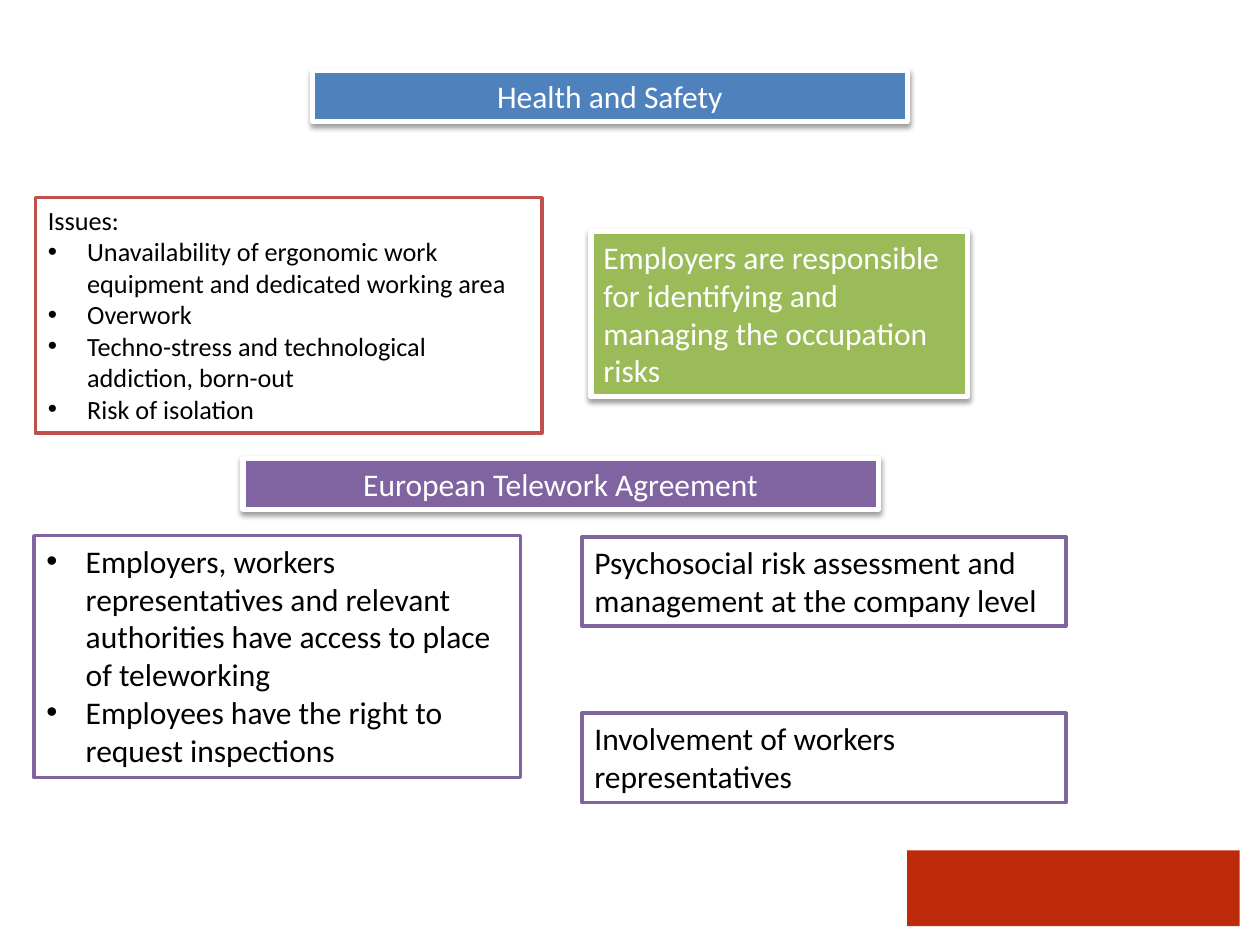
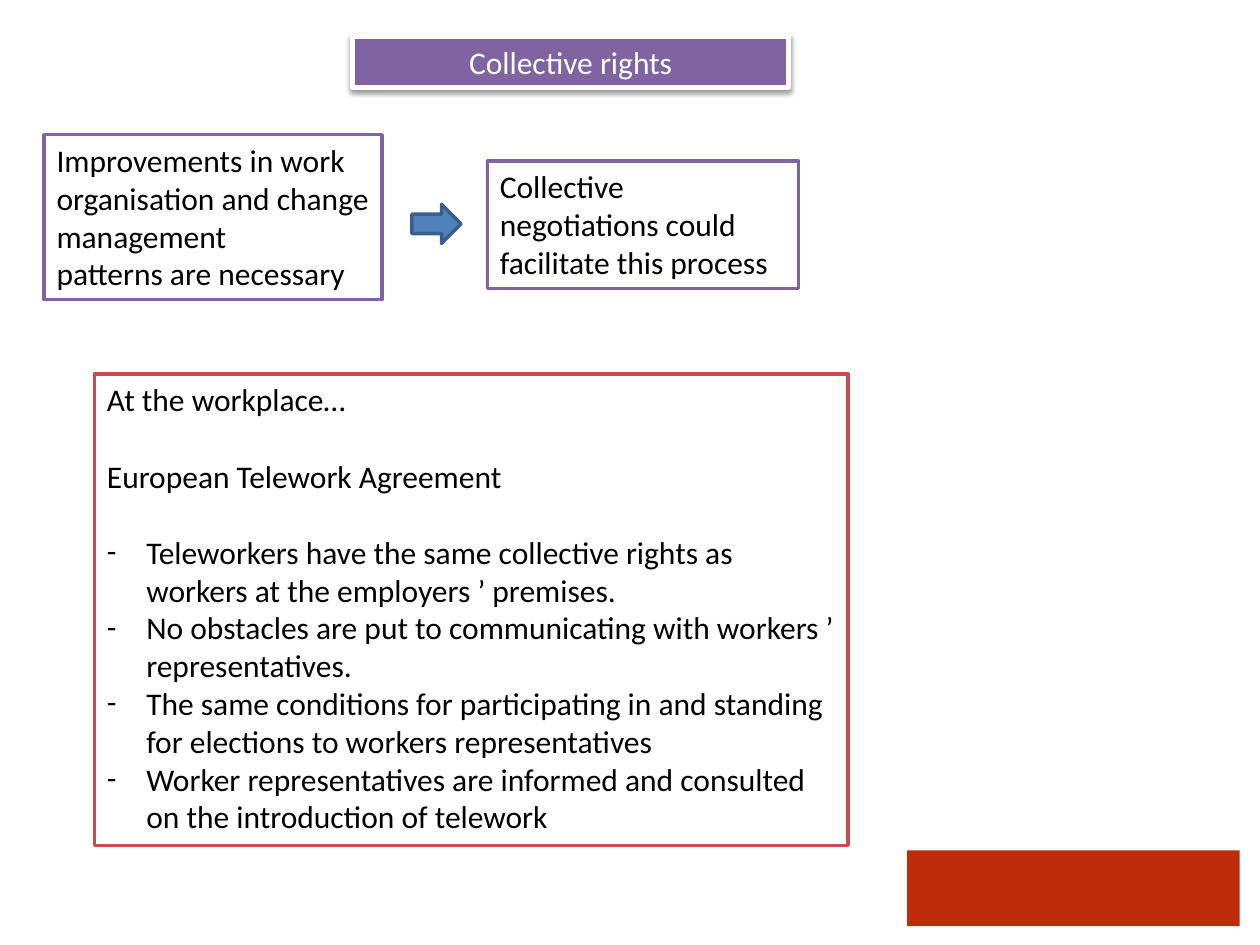
from lxml.etree import SubElement
from pptx import Presentation
from pptx.dml.color import RGBColor
from pptx.enum.shapes import MSO_SHAPE
from pptx.enum.text import MSO_ANCHOR, MSO_AUTO_SIZE, PP_ALIGN
from pptx.oxml.ns import qn
from pptx.util import Pt

WHITE, BLACK = "FFFFFF", "000000"
BLUE, NAVY, RED = "4F81BD", "3A5F8C", "C0504D"
GREEN, PURPLE, BRICK = "9BBB59", "8064A2", "BD2B0B"
LINE = 22  # height of one line of 18 pt text
INDENT = 22.5

FRAME = {"word_wrap": True, "auto_size": MSO_AUTO_SIZE.SHAPE_TO_FIT_TEXT,
         "vertical_anchor": MSO_ANCHOR.TOP}


def apply(target, values):
    for name, value in values.items():
        setattr(target, name, value)


def paint(fill, color):
    fill.solid()
    fill.fore_color.rgb = RGBColor.from_string(color)


def node(parent, tag, **attrs):
    return SubElement(parent, qn(tag), {k: str(v) for k, v in attrs.items()})


def shape(slide, box, fill, edge=None, width=2, kind=MSO_SHAPE.RECTANGLE):
    item = slide.shapes.add_shape(kind, *map(Pt, box))
    item.shadow.inherit = False
    paint(item.fill, fill)
    if edge:
        paint(item.line.fill, edge)
        item.line.width = Pt(width)
    else:
        item.line.fill.background()
    return item


def shade(item):
    effects = item._element.spPr.find(qn("a:effectLst"))
    cast = node(effects, "a:outerShdw", blurRad=Pt(3.1), dist=Pt(1.6),
                dir=5400000, rotWithShape=0)
    node(node(cast, "a:srgbClr", val=BLACK), "a:alpha", val=38000)


def mark(para, sign):
    props = para._p.get_or_add_pPr()
    props.set("marL", str(Pt(INDENT)))
    props.set("indent", str(-Pt(INDENT)))
    node(props, "a:buFont", typeface="Arial" if sign == "•" else "Calibri")
    node(props, "a:buChar", char=sign)


def write(item, lines, color, size=18, align=PP_ALIGN.LEFT, sign="•", gaps=()):
    """Lines that start with "* " become list items; gaps lists spaced lines."""
    frame = item.text_frame
    apply(frame, FRAME)
    for i, line in enumerate(lines):
        para = frame.add_paragraph() if i else frame.paragraphs[0]
        if line.startswith("* "):
            mark(para, sign)
        if i in gaps:
            para.space_before = Pt(LINE)
        para.alignment = align
        run = para.add_run()
        run.text = line.removeprefix("* ")
        apply(run.font, {"name": "Calibri", "size": Pt(size)})
        paint(run.font.fill, color)


def panel(slide, box, edge, *lines, **style):
    write(shape(slide, box, WHITE, edge), lines, BLACK, **style)


def block(slide, box, fill, text, align=PP_ALIGN.LEFT):
    item = shape(slide, box, fill, WHITE, 3)
    shade(item)
    write(item, [text], WHITE, align=align)


def title(slide, box, fill, text):
    block(slide, box, fill, text, PP_ALIGN.CENTER)


# Issues on the left, the employers' duty on the right
def health(slide, x, y, w):
    title(slide, (x + 158.4, y, 339.8, 29), BLUE, "Health and Safety")
    panel(slide, (x, y + 72.7, 289.4, 134.6), RED,
          "Issues:",
          "* Unavailability of ergonomic work equipment and dedicated working area",
          "* Overwork",
          "* Techno-stress and technological addiction, born-out",
          "* Risk of isolation", size=15)
    duty = 215.3
    block(slide, (x + w - duty, y + 92.2, duty, 94.3), GREEN,
          "Employers are responsible for identifying and managing "
          "the occupation risks")


# Access rights on the left, two measures stacked on the right
def accord(slide, x, y, w):
    title(slide, (x + 119.5, y, 363, 29), PURPLE, "European Telework Agreement")
    panel(slide, (x, y + 44, 278, 138.2), PURPLE,
          "* Employers, workers representatives and relevant authorities "
          "have access to place of teleworking",
          "* Employees have the right to request inspections")
    side = 276.5
    steps = ["Psychosocial risk assessment and management at the company level",
             "Involvement of workers representatives"]
    for i, text in enumerate(steps):
        panel(slide, (x + w - side, y + 44.6 + i * 100.8, side, 51.1),
              PURPLE, text)


# Need, arrow, answer
def process(slide, x, y, w):
    panel(slide, (x, y, 193, 94.3), PURPLE,
          "Improvements in work organisation and change management",
          "patterns are necessary")
    shape(slide, (x + 210.2, y + 39.8, 28.1, 22.3), BLUE, NAVY,
          kind=MSO_SHAPE.RIGHT_ARROW)
    reply = 177.8
    panel(slide, (x + w - reply, y + 15.1, reply, 72.7), PURPLE,
          "Collective negotiations could facilitate this process")


def rights(slide, x, y, w):
    panel(slide, (x, y, w, 269.3), RED,
          "At the workplace…",
          "European Telework Agreement",
          "* Teleworkers have the same collective rights as workers "
          "at the employers ’ premises.",
          "* No obstacles are put to communicating with workers ’ "
          "representatives.",
          "* The same conditions for participating in and standing for "
          "elections to workers representatives",
          "* Worker representatives are informed and consulted on the "
          "introduction of telework", sign="-", gaps=(1, 2))


# Blank slide with the shared corner band
def page(deck):
    slide = deck.slides.add_slide(deck.slide_layouts[6])
    shape(slide, (518.4, 486, 190, 43.2), BRICK)
    return slide


def main():
    deck = Presentation()
    apply(deck, {"slide_width": Pt(720), "slide_height": Pt(540)})

    first = page(deck)
    health(first, 20.2, 40.3, 532.8)
    accord(first, 19.4, 262.1, 589.7)

    second = page(deck)
    title(second, (201.6, 20.9, 249.1, 29), PURPLE, "Collective rights")
    process(second, 25.2, 77, 431.2)
    rights(second, 54, 213.8, 430.6)

    deck.save("out.pptx")


if __name__ == "__main__":
    main()
